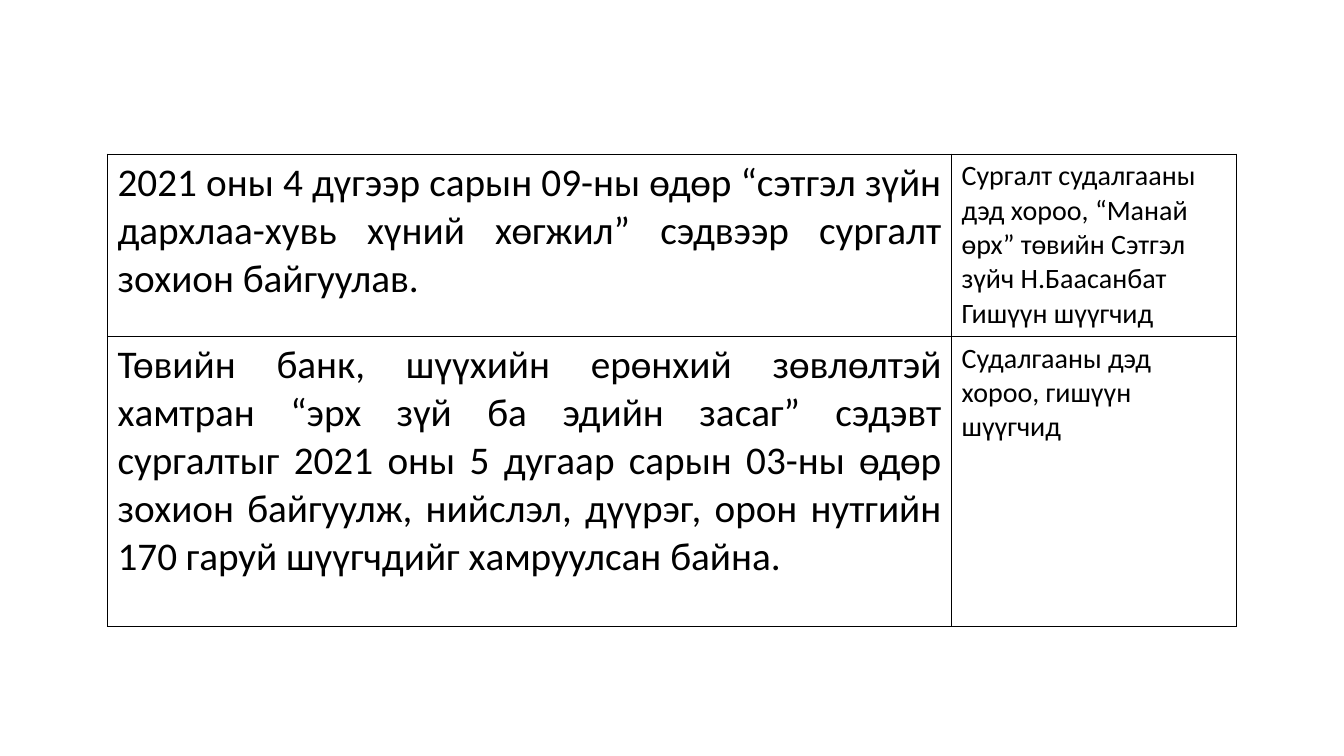
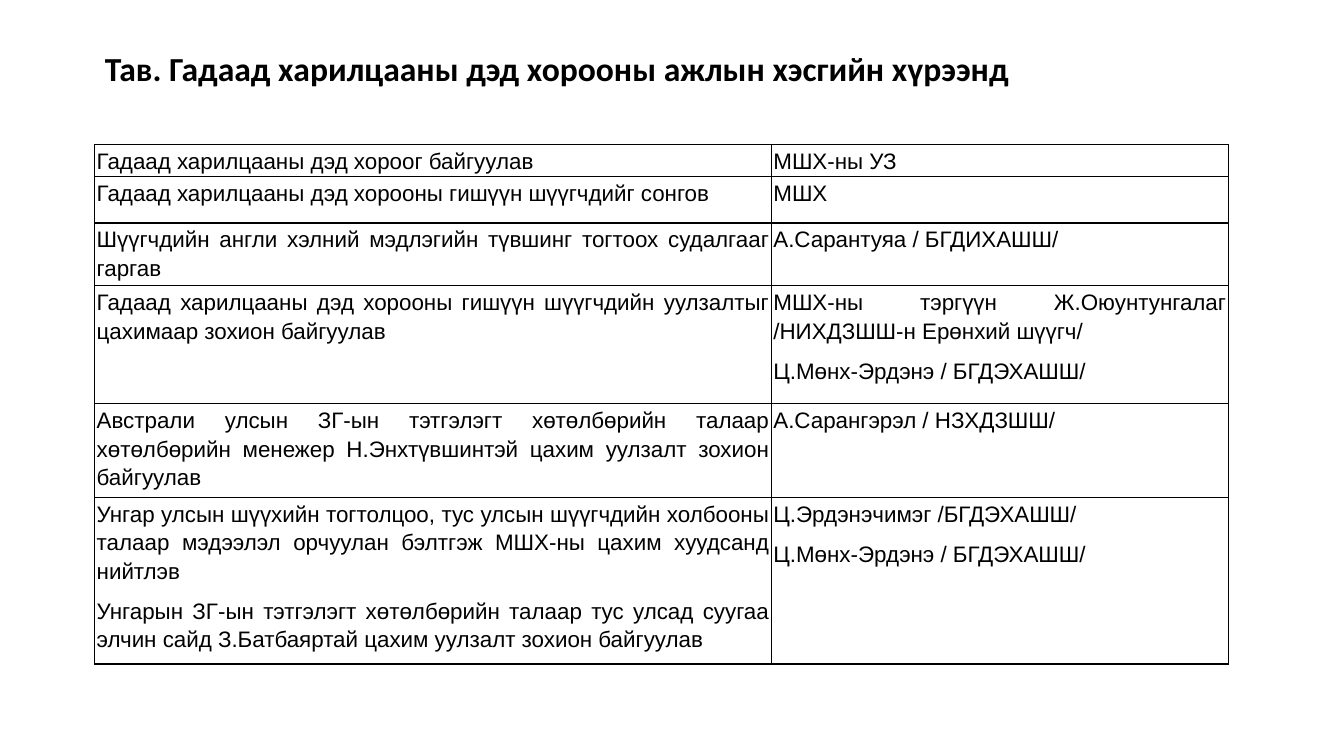
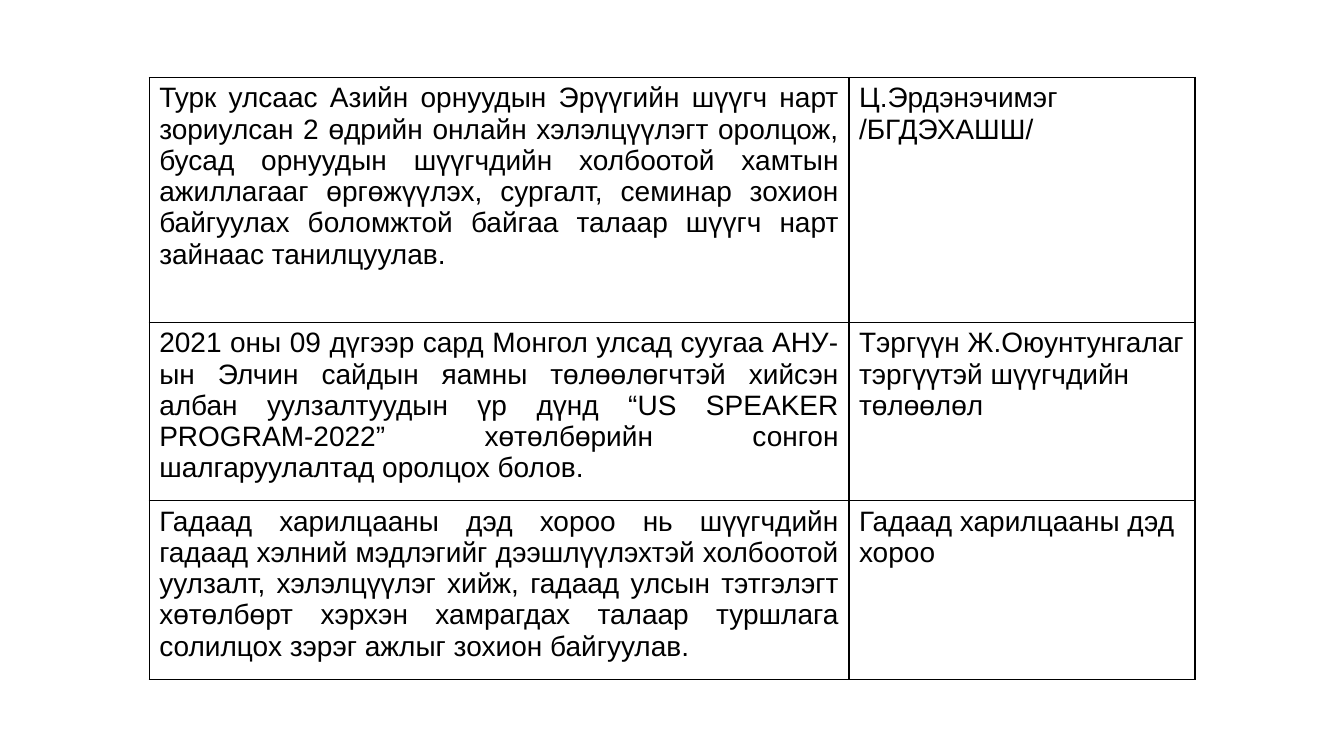
from lxml import etree
from pptx import Presentation
from pptx.dml.color import RGBColor
from pptx.enum.text import MSO_ANCHOR, MSO_AUTO_SIZE, PP_ALIGN
from pptx.oxml.ns import qn
from pptx.util import Inches, Pt

JUSTIFY, LEFT = PP_ALIGN.JUSTIFY, PP_ALIGN.LEFT
TOP = MSO_ANCHOR.TOP
FIT_SHAPE = MSO_AUTO_SIZE.SHAPE_TO_FIT_TEXT
BLACK = RGBColor(0x00, 0x00, 0x00)
TITLE_ONLY, BLANK = 5, 6

deck = Presentation()
deck.slide_width, deck.slide_height = Inches(13.33), Inches(7.5)
# The grid: one hundred columns and one hundred rows
COLUMN, ROW = deck.slide_width / 100, deck.slide_height / 100

TITLE_FONT = {"name": "Calibri", "size": Pt(24), "bold": True}
TIGHT_CELL = {"margin_left": Inches(0.02), "margin_right": Inches(0.02),
              "margin_top": Inches(0.01), "margin_bottom": 0}
AIRY_TEXT = {"line_spacing": 1.15, "space_after": Pt(8)}

# Each slide: a table, with a title where there is one; a list in a cell holds paragraphs
PAGES = [
    {
        "at": (8, 20.4), "columns": (62.8, 21.2), "rows": (24.1, 38.4),
        "font": "Calibri", "sizes": (28, 20), "aligns": (JUSTIFY, LEFT),
        "cells": [
            (["2021 оны 4 дүгээр сарын 09-ны өдөр “сэтгэл зүйн дархлаа-хувь хүний хөгжил” "
              "сэдвээр сургалт зохион байгуулав."],
             ["Сургалт судалгааны дэд хороо, “Манай өрх” төвийн Сэтгэл зүйч Н.Баасанбат",
              "Гишүүн шүүгчид"]),
            (["Төвийн банк, шүүхийн ерөнхий зөвлөлтэй хамтран “эрх зүй ба эдийн засаг” "
              "сэдэвт сургалтыг 2021 оны 5 дугаар сарын 03-ны өдөр зохион байгуулж, "
              "нийслэл, дүүрэг, орон нутгийн 170 гаруй шүүгчдийг хамруулсан байна."],
             ["Судалгааны дэд хороо, гишүүн шүүгчид"]),
        ],
    },
    {
        "title": "Тав. Гадаад харилцааны дэд хорооны ажлын хэсгийн хүрээнд",
        "at": (7.05, 19.1), "columns": (50.35, 34),
        "rows": (4.27, 6.13, 8.27, 15.6, 12.3, 22),
        "font": "Arial", "sizes": (16, 16), "aligns": (JUSTIFY, JUSTIFY),
        "cell_format": TIGHT_CELL, "para_format": AIRY_TEXT,
        "cells": [
            (["Гадаад харилцааны дэд хороог байгуулав"], ["МШХ-ны УЗ"]),
            (["Гадаад харилцааны дэд хорооны гишүүн шүүгчдийг сонгов"], ["МШХ"]),
            (["Шүүгчдийн англи хэлний мэдлэгийн түвшинг тогтоох судалгааг гаргав"],
             ["А.Сарантуяа / БГДИХАШШ/"]),
            (["Гадаад харилцааны дэд хорооны гишүүн шүүгчдийн уулзалтыг цахимаар "
              "зохион байгуулав"],
             ["МШХ-ны тэргүүн Ж.Оюунтунгалаг /НИХДЗШШ-н Ерөнхий шүүгч/",
              "Ц.Мөнх-Эрдэнэ / БГДЭХАШШ/"]),
            (["Австрали улсын ЗГ-ын тэтгэлэгт хөтөлбөрийн талаар хөтөлбөрийн менежер "
              "Н.Энхтүвшинтэй цахим уулзалт зохион байгуулав"],
             ["А.Сарангэрэл / НЗХДЗШШ/"]),
            (["Унгар улсын шүүхийн тогтолцоо, тус улсын шүүгчдийн холбооны талаар мэдээлэл "
              "орчуулан бэлтгэж МШХ-ны цахим хуудсанд нийтлэв",
              "Унгарын ЗГ-ын тэтгэлэгт хөтөлбөрийн талаар тус улсад суугаа элчин сайд "
              "З.Батбаяртай цахим уулзалт зохион байгуулав"],
             ["Ц.Эрдэнэчимэг /БГДЭХАШШ/", "Ц.Мөнх-Эрдэнэ / БГДЭХАШШ/"]),
        ],
    },
    {
        "at": (11.1, 10.25), "columns": (52.07, 25.75), "rows": (32.4, 23.6, 23.6),
        "font": "Arial", "sizes": (20, 20), "aligns": (JUSTIFY, LEFT),
        "cells": [
            (["Турк улсаас Азийн орнуудын Эрүүгийн шүүгч нарт зориулсан 2 өдрийн онлайн "
              "хэлэлцүүлэгт оролцож, бусад орнуудын шүүгчдийн холбоотой хамтын ажиллагааг "
              "өргөжүүлэх, сургалт, семинар зохион байгуулах боломжтой байгаа талаар шүүгч "
              "нарт зайнаас танилцуулав."],
             ["Ц.Эрдэнэчимэг /БГДЭХАШШ/"]),
            (["2021 оны 09 дүгээр сард Монгол улсад суугаа АНУ-ын Элчин сайдын яамны "
              "төлөөлөгчтэй хийсэн албан уулзалтуудын үр дүнд “US SPEAKER PROGRAM-2022” "
              "хөтөлбөрийн сонгон шалгаруулалтад оролцох болов."],
             ["Тэргүүн Ж.Оюунтунгалаг тэргүүтэй шүүгчдийн төлөөлөл"]),
            (["Гадаад харилцааны дэд хороо нь шүүгчдийн гадаад хэлний мэдлэгийг "
              "дээшлүүлэхтэй холбоотой уулзалт, хэлэлцүүлэг хийж, гадаад улсын тэтгэлэгт "
              "хөтөлбөрт хэрхэн хамрагдах талаар туршлага солилцох зэрэг ажлыг зохион "
              "байгуулав."],
             ["Гадаад харилцааны дэд хороо"]),
        ],
    },
]


def apply(target, values):
    for name, value in values.items():
        setattr(target, name, value)


def write(para, text, font_values):
    span = para.add_run()
    span.text = text
    apply(span.font, font_values)
    span.font.color.rgb = BLACK


for page in PAGES:
    slide = deck.slides.add_slide(deck.slide_layouts[TITLE_ONLY if "title" in page else BLANK])

    # Title
    if "title" in page:
        box = slide.shapes.title
        apply(box, {"left": round(7.05 * COLUMN), "top": round(5.7 * ROW),
                    "width": round(68.8 * COLUMN), "height": round(6.7 * ROW)})
        apply(box.text_frame, {"vertical_anchor": TOP, "word_wrap": True,
                               "auto_size": FIT_SHAPE})
        para = box.text_frame.paragraphs[0]
        para.alignment = LEFT
        write(para, page["title"], TITLE_FONT)

    # Table on the grid
    left, top = page["at"]
    table = slide.shapes.add_table(
        len(page["rows"]), len(page["columns"]), round(left * COLUMN), round(top * ROW),
        round(sum(page["columns"]) * COLUMN), round(sum(page["rows"]) * ROW)).table
    apply(table, {"first_row": False, "horz_banding": False})
    for column, width in zip(table.columns, page["columns"]):
        column.width = round(width * COLUMN)
    for row, height in zip(table.rows, page["rows"]):
        row.height = round(height * ROW)

    # Cells
    for row, texts in zip(table.rows, page["cells"]):
        for cell, lines, size, align in zip(row.cells, texts, page["sizes"], page["aligns"]):
            properties = cell._tc.get_or_add_tcPr()
            for side in ("a:lnL", "a:lnR", "a:lnT", "a:lnB"):
                border = etree.SubElement(properties, qn(side), w=str(Pt(1)))
                fill = etree.SubElement(border, qn("a:solidFill"))
                etree.SubElement(fill, qn("a:srgbClr"), val=str(BLACK))
            cell.fill.background()
            apply(cell, page.get("cell_format", {}))
            for number, line in enumerate(lines):
                frame = cell.text_frame
                para = frame.add_paragraph() if number else frame.paragraphs[0]
                apply(para, {"alignment": align, **page.get("para_format", {})})
                write(para, line, {"name": page["font"], "size": Pt(size)})

deck.save("out.pptx")
